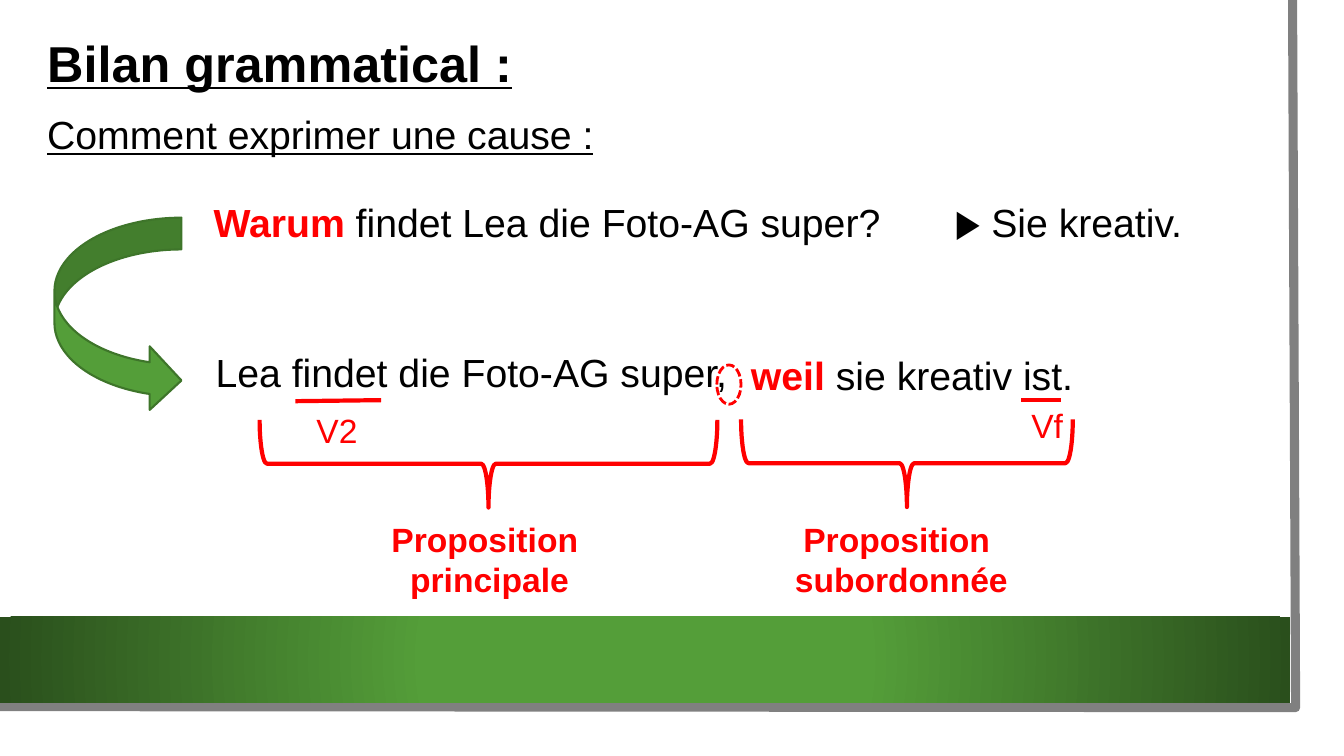
from lxml import etree
from pptx import Presentation
from pptx import util as u
from pptx.dml.color import RGBColor
from pptx.enum import dml, shapes, text
from pptx.oxml import parse_xml
from pptx.oxml.ns import nsdecls, qn

RED, BLACK, GREEN = "FF0000", "000000", "549E39"
KIND = shapes.MSO_SHAPE


def color(code):
    return RGBColor.from_string(code)


def inches(*sizes):
    return [u.Inches(size) for size in sizes]


def stroke(line, code, width, dash=None):
    line.color.rgb = color(code)
    line.width = u.Pt(width)
    if dash:
        line.dash_style = dash


def label(slide, box, paras, size, center=False):
    frame = slide.shapes.add_textbox(*inches(*box)).text_frame
    frame.word_wrap = True
    for i, runs in enumerate(paras):
        para = frame.paragraphs[0] if i == 0 else frame.add_paragraph()
        if center:
            para.alignment = text.PP_ALIGN.CENTER
        for words, code, style in runs:
            run = para.add_run()
            run.text = words
            run.font.color.rgb = color(code)
            format = {"name": "Arial", "size": u.Pt(size), **style}
            for key, value in format.items():
                setattr(run.font, key, value)


def shape(slide, kind, box, fill=None, line=None, turn=0):
    item = slide.shapes.add_shape(kind, *inches(*box))
    item.shadow.inherit = False
    item.rotation = turn
    if fill:
        item.fill.solid()
        item.fill.fore_color.rgb = color(fill)
    else:
        item.fill.background()
    if line:
        stroke(item.line, *line)
    else:
        item.line.fill.background()
    return item


def rule(slide, start, end):
    line = slide.shapes.add_connector(
        shapes.MSO_CONNECTOR.STRAIGHT, *inches(*start, *end))
    stroke(line.line, RED, 3)
    etree.SubElement(line._element.spPr, qn("a:effectLst"))


def edge(slide):
    start, *rest = [inches(*spot) for spot in
                    ((12.82, 0), (12.85, 7.02), (-0.03, 7.01))]
    pen = slide.shapes.build_freeform(*start)
    pen.add_line_segments(rest, close=False)
    item = pen.convert_to_shape()
    item.shadow.inherit = False
    item.fill.background()
    stroke(item.line, "808080", 6.5)


def band(slide):
    item = shape(slide, KIND.RECTANGLE, (0, 6.12, 12.8, 0.85))
    stops = "".join(
        f'<a:gs pos="{pos}000"><a:srgbClr val="{code}"/></a:gs>'
        for pos, code in ((34, GREEN), (100, "2A4F1C")))
    grad = parse_xml(
        f'<a:gradFill {nsdecls("a")} rotWithShape="1"><a:gsLst>{stops}</a:gsLst>'
        '<a:path path="circle"><a:fillToRect l="50000" t="50000" '
        'r="50000" b="50000"/></a:path></a:gradFill>')
    props = item._element.spPr
    props.replace(props.find(qn("a:noFill")), grad)


def main():
    deck = Presentation()
    deck.slide_width, deck.slide_height = inches(13.33, 7.5)
    slide = deck.slides.add_slide(deck.slide_layouts[6])
    bold, under = {"bold": True}, {"underline": True}

    edge(slide)
    band(slide)
    label(slide, (0.37, 0.27, 5.59, 0.71),
          [[("Bilan grammatical :", BLACK, {**bold, **under})]], 36)

    for box, runs in (
        ((0.37, 1.05, 5.83, 0.57),
         [("Comment exprimer une cause :", BLACK, under)]),
        ((2.02, 1.92, 7.02, 0.57),
         [("Warum ", RED, bold), ("findet Lea die Foto-AG super?", BLACK, {})]),
        ((9.37, 1.92, 3.3, 0.57), [("▶ Sie kreativ.", BLACK, {})]),
        ((2.04, 3.41, 5.6, 0.57),
         [("Lea findet die Foto-AG super,", BLACK, {})]),
        ((7.35, 3.44, 3.65, 0.57),
         [("weil ", RED, bold), ("sie kreativ ist.", BLACK, {})]),
    ):
        label(slide, box, [runs], 28)

    for brace, left, width, name in (
        ((4.41, 2.33, 0.87, 4.54), 3.75, 2.21, "principale"),
        ((8.56, 2.95, 0.87, 3.29), 7.76, 2.36, "subordonnée"),
    ):
        shape(slide, KIND.LEFT_BRACE, brace, line=(RED, 3), turn=270)
        label(slide, (left, 5.1, width, 0.91),
              [[(word, RED, bold)] for word in ("Proposition ", name)],
              24, center=True)

    for start, end, spot, verb in (
        ((2.93, 3.98), (3.78, 3.97), (3.04, 4.02), "V2"),
        ((10.13, 3.97), (10.52, 3.97), (10.13, 3.97), "Vf"),
    ):
        rule(slide, start, end)
        label(slide, (*spot, 0.79, 0.51), [[(verb, RED, {})]], 24)

    shape(slide, KIND.OVAL, (7.11, 3.62, 0.24, 0.39),
          line=(RED, 2, dml.MSO_LINE.SQUARE_DOT))
    shape(slide, KIND.CURVED_RIGHT_ARROW, (0.54, 2.16, 1.26, 1.93),
          GREEN, ("3E752A", 1.5))
    deck.save("out.pptx")


if __name__ == "__main__":
    main()
